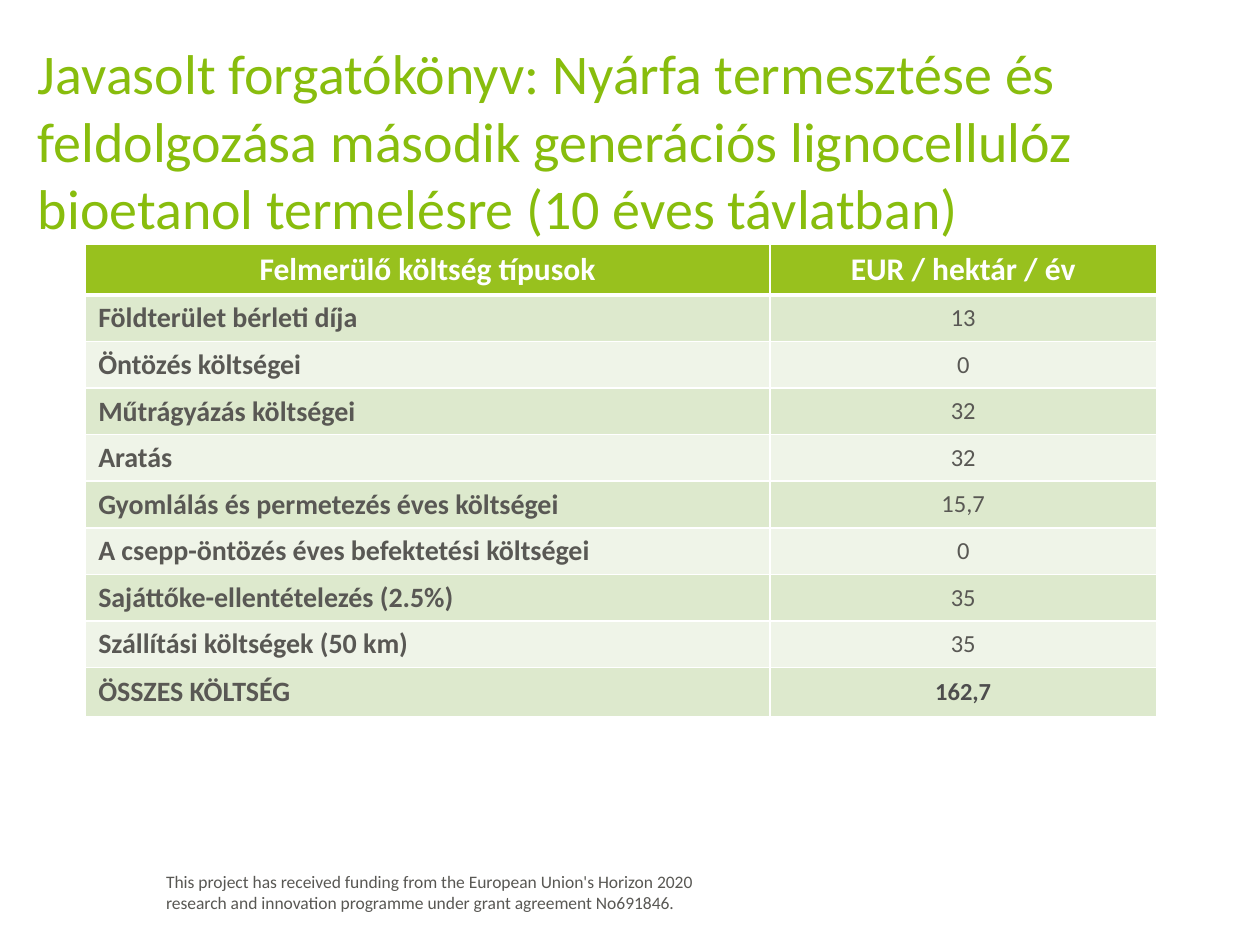
from lxml import etree
from pptx import Presentation
from pptx.dml.color import RGBColor
from pptx.enum import text
from pptx.oxml.ns import qn
from pptx.util import Inches, Pt

TITLE = ("Javasolt forgatókönyv: Nyárfa termesztése és feldolgozása második "
         "generációs lignocellulóz bioetanol termelésre (10 éves távlatban)")
FUNDING = ["This project has received funding from the European Union's Horizon 2020",
           "research and innovation programme under grant agreement No691846."]
HEAD = ("Felmerülő költség típusok", "EUR / hektár / év")
COSTS = [
    ("Földterület bérleti díja", "13"),
    ("Öntözés költségei", "0"),
    ("Műtrágyázás költségei", "32"),
    ("Aratás", "32"),
    ("Gyomlálás és permetezés éves költségei", "15,7"),
    ("A csepp-öntözés éves befektetési költségei", "0"),
    ("Sajáttőke-ellentételezés (2.5%)", "35"),
    ("Szállítási költségek (50 km)", "35"),
    ("ÖSSZES KÖLTSÉG", "162,7"),
]
COLORS = {"title": "88BD0D", "head": "98C11E", "odd": "DDE9CD", "even": "EFF4E8",
          "text": "595854", "total": "4D4D4D", "white": "FFFFFF"}
WIDTHS = (5.43, 3.07)
HEIGHTS = [0.4] + [0.37] * (len(COSTS) - 1) + [0.39]
LEFT, CENTER = text.PP_ALIGN.LEFT, text.PP_ALIGN.CENTER
MIDDLE, TOP = text.MSO_ANCHOR.MIDDLE, text.MSO_ANCHOR.TOP


def write(frame, lines, size, color="text", bold=False, align=LEFT):
    frame.word_wrap = True
    for i, line in enumerate(lines):
        para = frame.paragraphs[0] if i == 0 else frame.add_paragraph()
        para.alignment = align
        run = para.add_run()
        run.text = line
        font = run.font
        font.name, font.size, font.bold = "Calibri", Pt(size), bold
        font.color.rgb = RGBColor.from_string(COLORS[color])


def border(cell, top, bottom):
    props = cell._tc.get_or_add_tcPr()
    sides = {"lnL": 1, "lnR": 1, "lnT": top, "lnB": bottom}
    for i, (side, width) in enumerate(sides.items()):
        line = etree.Element(qn(f"a:{side}"), w=str(Pt(width)))
        fill = etree.SubElement(line, qn("a:solidFill"))
        etree.SubElement(fill, qn("a:srgbClr"), val=COLORS["white"])
        props.insert(i, line)


def paint(cell, fill, anchor, top=1, bottom=1):
    cell.fill.solid()
    cell.fill.fore_color.rgb = RGBColor.from_string(COLORS[fill])
    cell.vertical_anchor = anchor
    border(cell, top, bottom)


def place(shape, *box):
    shape.left, shape.top, shape.width, shape.height = map(Inches, box)


def main():
    deck = Presentation()
    deck.slide_width, deck.slide_height = Inches(10), Inches(7.5)
    slide = deck.slides.add_slide(deck.slide_layouts[5])

    title = slide.shapes.title
    place(title, 0.2, 0.68, 9.47, 0.86)
    title.text_frame.auto_size = text.MSO_AUTO_SIZE.NONE
    title.text_frame.vertical_anchor = MIDDLE
    write(title.text_frame, [TITLE], 32, "title")

    note = slide.shapes.add_textbox(*map(Inches, (1.22, 6.86, 4.8, 0.44)))
    write(note.text_frame, FUNDING, 10)

    box = map(Inches, (0.68, 1.94, sum(WIDTHS), sum(HEIGHTS)))
    table = slide.shapes.add_table(len(HEIGHTS), len(WIDTHS), *box).table
    for col, width in zip(table.columns, WIDTHS):
        col.width = Inches(width)
    for row, height in zip(table.rows, HEIGHTS):
        row.height = Inches(height)

    for c, label in enumerate(HEAD):
        cell = table.cell(0, c)
        paint(cell, "head", TOP, bottom=3)
        write(cell.text_frame, [label], 18, "white", True, CENTER)
    for r, (label, cost) in enumerate(COSTS, 1):
        last = r == len(COSTS)
        name, value = table.cell(r, 0), table.cell(r, 1)
        for cell in (name, value):
            paint(cell, "odd" if r % 2 else "even", MIDDLE, top=3 if r == 1 else 1)
        write(name.text_frame, [label], 16, bold=True)
        write(value.text_frame, [cost], 14, "total" if last else "text", last, CENTER)

    deck.save("out.pptx")


if __name__ == "__main__":
    main()
